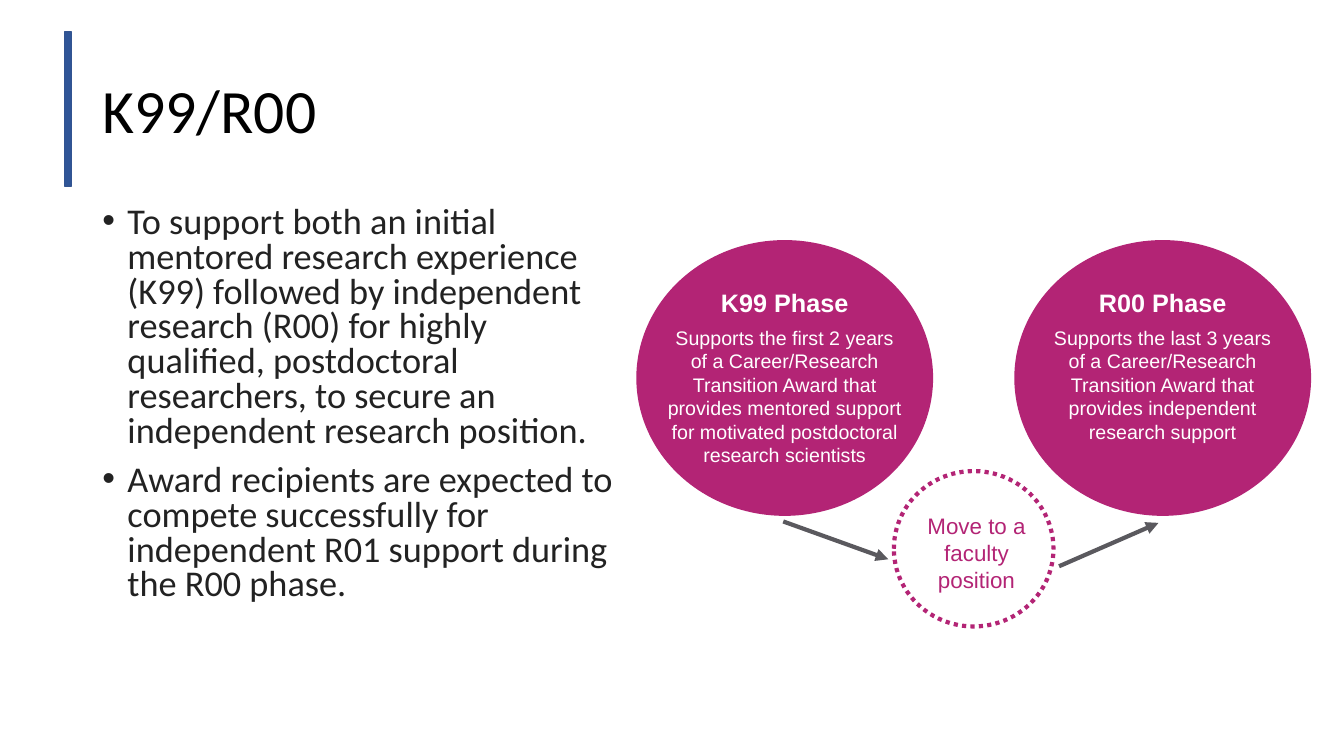
from collections import namedtuple
from copy import deepcopy
from dataclasses import dataclass

from lxml import etree
from pptx import Presentation
from pptx.dml.color import RGBColor
from pptx.enum import dml, shapes, text
from pptx.oxml import ns
from pptx.util import Pt

Box = namedtuple("Box", "left top width height")


@dataclass(frozen=True)
class Theme:
    heading_font: str = "Calibri"
    diagram_font: str = "Arial"
    bar: str = "2F5597"
    bar_edge: str = "325491"
    title: str = "000000"
    body: str = "222222"
    accent: str = "B32475"
    white: str = "FFFFFF"
    arrow: str = "5A595E"
    title_size: float = 44
    body_size: float = 25.9
    phase_size: float = 18
    detail_size: float = 14
    move_size: float = 16
    line_width: float = 3


THEME = Theme()
TITLE = dict(name=THEME.heading_font, size=THEME.title_size, color=THEME.title)
BODY = dict(name=THEME.heading_font, size=THEME.body_size, color=THEME.body)
PHASE = dict(name=THEME.diagram_font, size=THEME.phase_size, color=THEME.white, bold=True)
DETAIL = dict(name=THEME.diagram_font, size=THEME.detail_size, color=THEME.white)
MOVE = dict(name=THEME.diagram_font, size=THEME.move_size, color=THEME.accent)
CENTER = dict(alignment=text.PP_ALIGN.CENTER)

GOALS = [
    "To support both an initial mentored research experience (K99) followed by "
    "independent research (R00) for highly qualified, postdoctoral researchers, "
    "to secure an independent research position.",
    "Award recipients are expected to compete successfully for independent R01 "
    "support during the R00 phase.",
]
# Heading, detail, and side inset of the text in its circle
PHASES = [
    ("K99 Phase", "Supports the first 2 years of a Career/Research Transition Award that "
     "provides mentored support for motivated postdoctoral research scientists", 14),
    ("R00 Phase", "Supports the last 3 years\vof a Career/Research Transition Award that "
     "provides independent research support", 9),
]


def place(box):
    return [Pt(length) for length in box]


def style_text(para, look):
    for span in para.runs:
        for key, value in look.items():
            if key == "color":
                span.font.color.rgb = RGBColor.from_string(value)
            else:
                setattr(span.font, key, Pt(value) if key == "size" else value)
    # Line breaks take the size of the text around them
    for line_break in para._p.findall(ns.qn("a:br")):
        line_break.append(deepcopy(para.runs[0]._r.rPr))


def add_text(page, box, lines, anchor=text.MSO_ANCHOR.TOP):
    """Each line is (words, run format, paragraph format)."""
    frame = page.shapes.add_textbox(*place(box)).text_frame
    frame.word_wrap = True
    frame.vertical_anchor = anchor
    for index, (words, look, layout) in enumerate(lines):
        para = frame.paragraphs[0] if index == 0 else frame.add_paragraph()
        para.text = words
        for key, value in layout.items():
            setattr(para, key, value)
        style_text(para, look)
    return frame


def add_figure(page, kind, box, fill, edge=None, width=1):
    figure = page.shapes.add_shape(kind, *place(box))
    figure.shadow.inherit = False
    figure.fill.solid()
    figure.fill.fore_color.rgb = RGBColor.from_string(fill)
    if edge:
        figure.line.color.rgb = RGBColor.from_string(edge)
        figure.line.width = Pt(width)
    else:
        figure.line.fill.background()
    return figure


def add_arrow(page, start, end):
    arrow = page.shapes.add_connector(shapes.MSO_CONNECTOR.STRAIGHT, *place(start + end))
    arrow.line.color.rgb = RGBColor.from_string(THEME.arrow)
    arrow.line.width = Pt(THEME.line_width)
    etree.SubElement(arrow.line._get_or_add_ln(), ns.qn("a:tailEnd"), type="triangle")
    etree.SubElement(arrow._element.spPr, ns.qn("a:effectLst"))


def add_title(page, box):
    # Accent bar, then the title beside it
    bar = Box(box.left, box.top, 5, 110)
    add_figure(page, shapes.MSO_SHAPE.RECTANGLE, bar, THEME.bar, THEME.bar_edge)
    words = Box(box.left + 20, box.top + 6, box.width - 20, 104)
    add_text(page, words, [("K99/R00", TITLE, dict(line_spacing=0.9))],
             text.MSO_ANCHOR.MIDDLE)


def add_goals(page, box):
    lines = [(goal, BODY, dict(line_spacing=0.8, space_before=Pt(10 if index else 0)))
             for index, goal in enumerate(GOALS)]
    frame = add_text(page, box, lines)
    for para in frame.paragraphs:
        properties = para._p.get_or_add_pPr()
        properties.set("marL", str(Pt(18)))
        properties.set("indent", str(-Pt(18)))
        etree.SubElement(properties, ns.qn("a:buFont"), typeface="Arial")
        etree.SubElement(properties, ns.qn("a:buChar"), char="•")


def add_phase(page, box, heading, detail, inset):
    add_figure(page, shapes.MSO_SHAPE.OVAL, box, THEME.accent)
    words = Box(box.left + inset, box.top + 30, box.width - 2 * inset, 137)
    add_text(page, words, [(heading, PHASE, dict(CENTER, space_after=Pt(6))),
                           (detail, DETAIL, CENTER)])


def add_move(page, box):
    ring = add_figure(page, shapes.MSO_SHAPE.OVAL, box, THEME.white,
                      THEME.accent, THEME.line_width)
    ring.line.dash_style = dml.MSO_LINE.ROUND_DOT
    words = Box(box.left + 3, box.top + 26, box.width - 2, 66)
    add_text(page, words, [("Move to a faculty position", MOVE, CENTER)])


def add_diagram(page, box):
    # The two phases at the ends of the region
    width, height = 212, 197
    step = box.width - width
    for index, phase in enumerate(PHASES):
        add_phase(page, Box(box.left + index * step, box.top, width, height), *phase)
    # The move that links them
    add_arrow(page, (box.left + 105, box.top + 201), (box.left + 180, box.top + 228))
    add_move(page, Box(box.left + 184, box.top + 165, 114, 111))
    add_arrow(page, (box.left + 302, box.top + 233), (box.left + 373, box.top + 202))


def main():
    deck = Presentation()
    deck.slide_width, deck.slide_height = Pt(960), Pt(540)
    page = deck.slides.add_slide(deck.slide_layouts[6])
    add_title(page, Box(46, 23, 848, 110))
    add_goals(page, Box(66, 144, 390, 326))
    add_diagram(page, Box(454.5, 171.5, 482, 276))
    deck.save("out.pptx")


if __name__ == "__main__":
    main()
